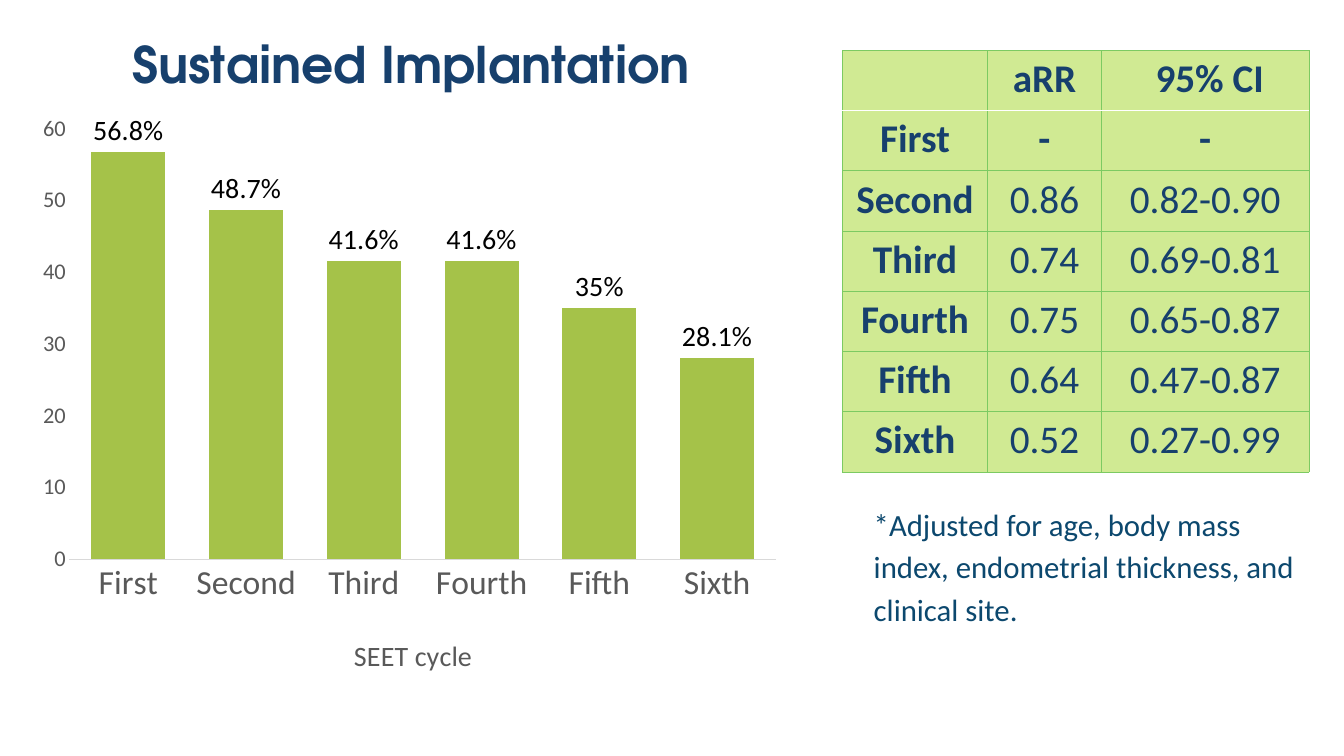
from dataclasses import dataclass

from lxml import etree
from pptx import Presentation
from pptx import util as u
from pptx.chart import data as chart_data
from pptx.dml import color
from pptx.enum import chart as chart_kinds, text
from pptx.oxml import ns


@dataclass(frozen=True)
class Theme:
    navy: str = "17406D"
    note_blue: str = "0C486E"
    bar: str = "A5C249"
    cell: str = "D0EA93"
    cell_edge: str = "7CCA62"
    white: str = "FFFFFF"
    black: str = "000000"
    gray: str = "595959"
    axis_line: str = "D9D9D9"
    body_font: str = "Calibri"
    title_font: str = "TeX Gyre Adventor"
    title_size: int = 36
    table_size: int = 28
    category_size: int = 24
    note_size: int = 22
    label_size: int = 20
    scale_size: int = 16


@dataclass(frozen=True)
class Box:
    left: float
    top: float
    width: float
    height: float

    def lengths(self):
        return [u.Cm(n) for n in (self.left, self.top, self.width, self.height)]


THEME = Theme()
CYCLES = ["First", "Second", "Third", "Fourth", "Fifth", "Sixth"]
RATES = [56.8, 48.7, 41.6, 41.6, 35, 28.1]
RISKS = [
    ("-", "-"),
    ("0.86", "0.82-0.90"),
    ("0.74", "0.69-0.81"),
    ("0.75", "0.65-0.87"),
    ("0.64", "0.47-0.87"),
    ("0.52", "0.27-0.99"),
]
RISK_ROWS = [("", "aRR", " 95% CI")] + [(c, *r) for c, r in zip(CYCLES, RISKS)]
COLUMN_SHARES = (1.44, 1.13, 2.06)


def apply(target, values):
    for name, value in values.items():
        setattr(target, name, value)


def rgb(value):
    return color.RGBColor.from_string(value)


def set_font(font, size, ink, name=THEME.body_font, bold=False):
    apply(font, dict(size=u.Pt(size), name=name, bold=bold))
    font.color.rgb = rgb(ink)


def set_layout(element, index, **places):
    for old in element.findall(ns.qn("c:layout")):
        element.remove(old)
    layout = etree.Element(ns.qn("c:layout"))
    manual = etree.SubElement(layout, ns.qn("c:manualLayout"))
    for tag, value in places.items():
        etree.SubElement(manual, ns.qn(f"c:{tag}")).set("val", str(value))
    element.insert(index, layout)


def write_title(title, words, x, y, **look):
    frame = title.text_frame
    frame.text = words
    set_font(frame.paragraphs[0].runs[0].font, **look)
    set_layout(title._element, 1, xMode="edge", yMode="edge", x=x, y=y)


def implantation_chart(slide, box):
    rates = chart_data.CategoryChartData(number_format="General")
    rates.categories = CYCLES
    rates.add_series("Series 1", RATES)
    chart = slide.shapes.add_chart(
        chart_kinds.XL_CHART_TYPE.COLUMN_CLUSTERED, *box.lengths(), rates
    ).chart
    set_font(chart.font, 10, THEME.black)
    apply(chart, dict(has_legend=False, has_title=True))
    write_title(chart.chart_title, "Sustained Implantation", 0.14, 0.03,
                size=THEME.title_size, ink=THEME.navy,
                name=THEME.title_font, bold=True)

    columns = chart.plots[0]
    apply(columns, dict(gap_width=59, overlap=-37, vary_by_categories=False,
                        has_data_labels=True))
    bars = columns.series[0].format.fill
    bars.solid()
    bars.fore_color.rgb = rgb(THEME.bar)
    labels = columns.data_labels
    apply(labels, dict(show_value=True, number_format='General"%"',
                       number_format_is_linked=False,
                       position=chart_kinds.XL_LABEL_POSITION.OUTSIDE_END))
    set_font(labels.font, THEME.label_size, THEME.black)

    cycle_axis, rate_axis = chart.category_axis, chart.value_axis
    no_tick = chart_kinds.XL_TICK_MARK.NONE
    for axis, size in ((cycle_axis, THEME.category_size),
                       (rate_axis, THEME.scale_size)):
        apply(axis, dict(major_tick_mark=no_tick, minor_tick_mark=no_tick,
                         has_major_gridlines=False))
        set_font(axis.tick_labels.font, size, THEME.gray)
    apply(rate_axis, dict(minimum_scale=0, maximum_scale=60, major_unit=10))
    rate_axis.format.line.fill.background()
    cycle_axis.format.line.color.rgb = rgb(THEME.axis_line)
    cycle_axis.format.line.width = u.Pt(0.75)
    write_title(cycle_axis.axis_title, "SEET cycle", 0.43, 0.92,
                size=THEME.label_size, ink=THEME.gray)
    plot_area = chart._chartSpace.find(".//" + ns.qn("c:plotArea"))
    set_layout(plot_area, 0, layoutTarget="inner", xMode="edge", yMode="edge",
               x=0.071, y=0.175, w=0.908, h=0.639)


def set_borders(cell, edges):
    properties = cell._tc.get_or_add_tcPr()
    for index, (side, (ink, points)) in enumerate(edges.items()):
        line = etree.Element(ns.qn(f"a:ln{side}"), w=str(u.Pt(points)))
        fill = etree.SubElement(line, ns.qn("a:solidFill"))
        etree.SubElement(fill, ns.qn("a:srgbClr"), val=ink)
        properties.insert(index, line)


def risk_table(slide, box):
    table = slide.shapes.add_table(
        len(RISK_ROWS), len(COLUMN_SHARES), *box.lengths()
    ).table
    apply(table, dict(first_row=False, horz_banding=False))
    for column, share in zip(table.columns, COLUMN_SHARES):
        column.width = u.Cm(box.width * share / sum(COLUMN_SHARES))
    green, white = (THEME.cell_edge, 0.5), (THEME.white, 1)
    for r, values in enumerate(RISK_ROWS):
        table.rows[r].height = u.Cm(box.height / len(RISK_ROWS))
        for c, value in enumerate(values):
            cell = table.cell(r, c)
            cell.fill.solid()
            cell.fill.fore_color.rgb = rgb(THEME.cell)
            cell.text = value
            paragraph = cell.text_frame.paragraphs[0]
            paragraph.alignment = text.PP_ALIGN.CENTER
            set_font(paragraph.font, THEME.table_size, THEME.navy,
                     bold=r < 2 or c == 0)
            for run in paragraph.runs:
                set_font(run.font, THEME.table_size, THEME.navy,
                         bold=r < 2 or c == 0)
            set_borders(cell, dict(L=green, R=green,
                                   T=white if r == 1 else green,
                                   B=white if r == 0 else green))


def adjustment_note(slide, box):
    frame = slide.shapes.add_textbox(*box.lengths()).text_frame
    apply(frame, dict(word_wrap=True,
                      auto_size=text.MSO_AUTO_SIZE.SHAPE_TO_FIT_TEXT))
    note = frame.paragraphs[0]
    apply(note, dict(line_spacing=1.15, space_after=u.Pt(8)))
    run = note.add_run()
    run.text = ("*Adjusted for age, body mass index, endometrial thickness, "
                "and clinical site.")
    set_font(run.font, THEME.note_size, THEME.note_blue)


def main():
    deck = Presentation()
    apply(deck, dict(slide_width=u.Cm(33.87), slide_height=u.Cm(19.05)))
    slide = deck.slides.add_slide(deck.slide_layouts[6])
    implantation_chart(slide, Box(0.36, 0.28, 19.61, 16.97))
    adjustment_note(slide, Box(21.77, 12.47, 11.76, 4.72))
    risk_table(slide, Box(21.23, 1.27, 11.76, 10.62))
    deck.save("out.pptx")


if __name__ == "__main__":
    main()
